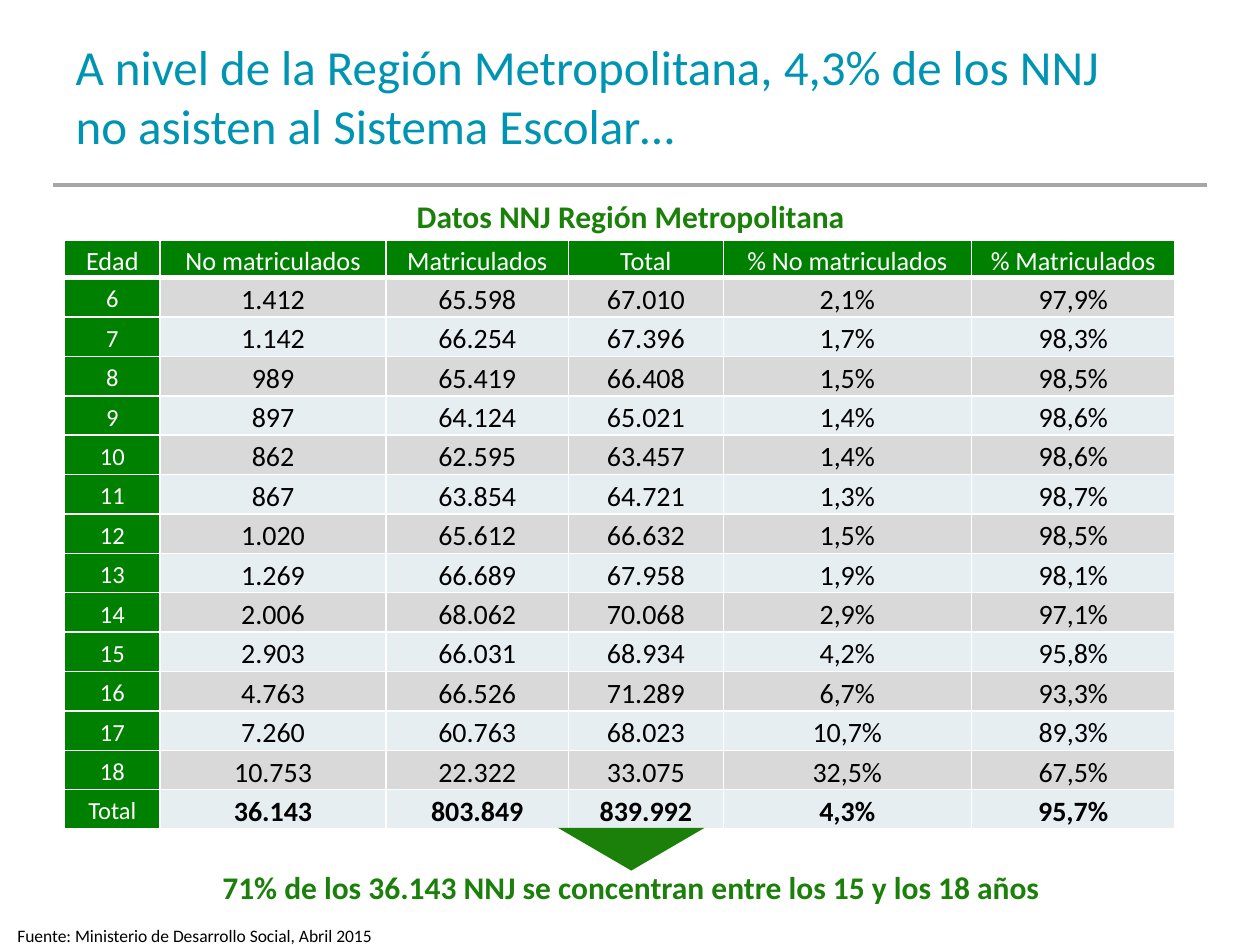
from lxml.etree import SubElement
from pptx import Presentation
from pptx.dml.color import RGBColor
from pptx.enum.shapes import MSO_CONNECTOR, MSO_SHAPE
from pptx.enum.text import MSO_ANCHOR as Anchor, PP_ALIGN as Align
from pptx.oxml.ns import qn
from pptx.util import Cm, Pt

HEADINGS = ["Edad", "No matriculados", "Matriculados", "Total",
            "% No matriculados", "% Matriculados"]
AGES = [
    ["6", "1.412", "65.598", "67.010", "2,1%", "97,9%"],
    ["7", "1.142", "66.254", "67.396", "1,7%", "98,3%"],
    ["8", "989", "65.419", "66.408", "1,5%", "98,5%"],
    ["9", "897", "64.124", "65.021", "1,4%", "98,6%"],
    ["10", "862", "62.595", "63.457", "1,4%", "98,6%"],
    ["11", "867", "63.854", "64.721", "1,3%", "98,7%"],
    ["12", "1.020", "65.612", "66.632", "1,5%", "98,5%"],
    ["13", "1.269", "66.689", "67.958", "1,9%", "98,1%"],
    ["14", "2.006", "68.062", "70.068", "2,9%", "97,1%"],
    ["15", "2.903", "66.031", "68.934", "4,2%", "95,8%"],
    ["16", "4.763", "66.526", "71.289", "6,7%", "93,3%"],
    ["17", "7.260", "60.763", "68.023", "10,7%", "89,3%"],
    ["18", "10.753", "22.322", "33.075", "32,5%", "67,5%"],
]
TOTALS = ["Total", "36.143", "803.849", "839.992", "4,3%", "95,7%"]
COLUMN_WIDTHS = [1.93, 4.55, 3.68, 3.12, 5.0, 4.11]
ROW_HEIGHT = 0.71


def color(hex_code):
    return RGBColor.from_string(hex_code)


class Deck:
    font = "Calibri"
    teal, green, header_green = "0094B3", "1B800A", "008000"
    black, white, rule_gray = "000000", "FFFFFF", "A6A6A6"
    bands = ["D9D9D9", "E7EEF2"]

    def __init__(self, width, height):
        self.prs = Presentation()
        self.prs.slide_width, self.prs.slide_height = Cm(width), Cm(height)

    def new_slide(self):
        self.slide = self.prs.slides.add_slide(self.prs.slide_layouts[5])

    def add_words(self, paragraph, words, size, hex_code, bold=False, align=Align.CENTER):
        paragraph.alignment = align
        run = paragraph.add_run()
        run.text = words
        run.font.name, run.font.size, run.font.bold = self.font, Pt(size), bold
        run.font.color.rgb = color(hex_code)

    def title(self, words, left, top, width, height):
        title = self.slide.shapes.title
        title.left, title.top = Cm(left), Cm(top)
        title.width, title.height = Cm(width), Cm(height)
        title.text_frame.vertical_anchor = Anchor.MIDDLE
        self.add_words(title.text_frame.paragraphs[0], words, 28, self.teal,
                       align=Align.LEFT)

    def text(self, words, box, size, hex_code, bold=False, align=Align.CENTER):
        frame = self.slide.shapes.add_textbox(*map(Cm, box)).text_frame
        frame.word_wrap = True
        self.add_words(frame.paragraphs[0], words, size, hex_code, bold, align)

    def rule(self, left, right, y):
        rule = self.slide.shapes.add_connector(
            MSO_CONNECTOR.STRAIGHT, Cm(left), Cm(y), Cm(right), Cm(y))
        rule.line.color.rgb = color(self.rule_gray)
        rule.line.width = Pt(2.25)
        SubElement(rule._element.spPr, qn("a:effectLst"))

    def down_triangle(self, left, top, width, height):
        triangle = self.slide.shapes.add_shape(
            MSO_SHAPE.ISOSCELES_TRIANGLE, Cm(left), Cm(top), Cm(width), Cm(height))
        triangle.rotation = 180
        triangle.shadow.inherit = False
        triangle.fill.solid()
        triangle.fill.fore_color.rgb = color(self.green)
        triangle.line.fill.background()

    def borders(self, cell, bottom):
        properties = cell._tc.get_or_add_tcPr()
        for side, points in (("L", 1), ("R", 1), ("T", 1), ("B", bottom)):
            line = SubElement(properties, qn(f"a:ln{side}"), w=str(Pt(points)))
            fill = SubElement(line, qn("a:solidFill"))
            SubElement(fill, qn("a:srgbClr"), val=self.white)

    def cell(self, cell, words, fill, size, hex_code, bold, anchor, bottom):
        cell.margin_left = cell.margin_right = Cm(0.13)
        cell.margin_top = cell.margin_bottom = 0
        cell.vertical_anchor = anchor
        self.borders(cell, bottom)
        cell.fill.solid()
        cell.fill.fore_color.rgb = color(fill)
        paragraph = cell.text_frame.paragraphs[0]
        paragraph.line_spacing = 1.15
        self.add_words(paragraph, words, size, hex_code, bold)

    def table(self, rows, left, top):
        table = self.slide.shapes.add_table(
            len(rows), len(COLUMN_WIDTHS), Cm(left), Cm(top),
            Cm(sum(COLUMN_WIDTHS)), Cm(ROW_HEIGHT * len(rows))).table
        table.first_row = table.horz_banding = False
        for column, width in zip(table.columns, COLUMN_WIDTHS):
            column.width = Cm(width)
        for r, row in enumerate(rows):
            for c, words in enumerate(row):
                if r == 0 or c == 0:
                    look = (self.header_green, 14 if r else 15, self.white,
                            False, Anchor.MIDDLE)
                else:
                    look = (self.bands[(r - 1) % 2], 16, self.black,
                            row is TOTALS, Anchor.BOTTOM)
                self.cell(table.cell(r, c), words, *look, bottom=1 if r else 3)


def main():
    deck = Deck(25.4, 19.05)
    deck.new_slide()

    # Heading
    deck.rule(1.07, 24.33, 3.73)
    deck.title("A nivel de la Región Metropolitana, 4,3% de los NNJ "
               "no asisten al Sistema Escolar…", 1.27, 0.53, 21.64, 2.77)

    # Enrolment by age
    deck.table([HEADINGS, *AGES, TOTALS], 1.3, 4.85)
    deck.text("Datos NNJ Región Metropolitana", (6.43, 3.84, 12.57, 0.99),
              18, deck.green, bold=True)

    # Conclusion and source
    deck.text("71% de los 36.143 NNJ se concentran entre los 15 y los 18 años",
              (0.56, 17.37, 24.33, 1.02), 18, deck.green, bold=True)
    deck.down_triangle(11.25, 16.69, 2.95, 0.86)
    deck.text("Fuente: Ministerio de Desarrollo Social, Abril 2015",
              (0.1, 18.52, 14.6, 0.69), 10, deck.black, align=Align.LEFT)

    deck.prs.save("out.pptx")


if __name__ == "__main__":
    main()
